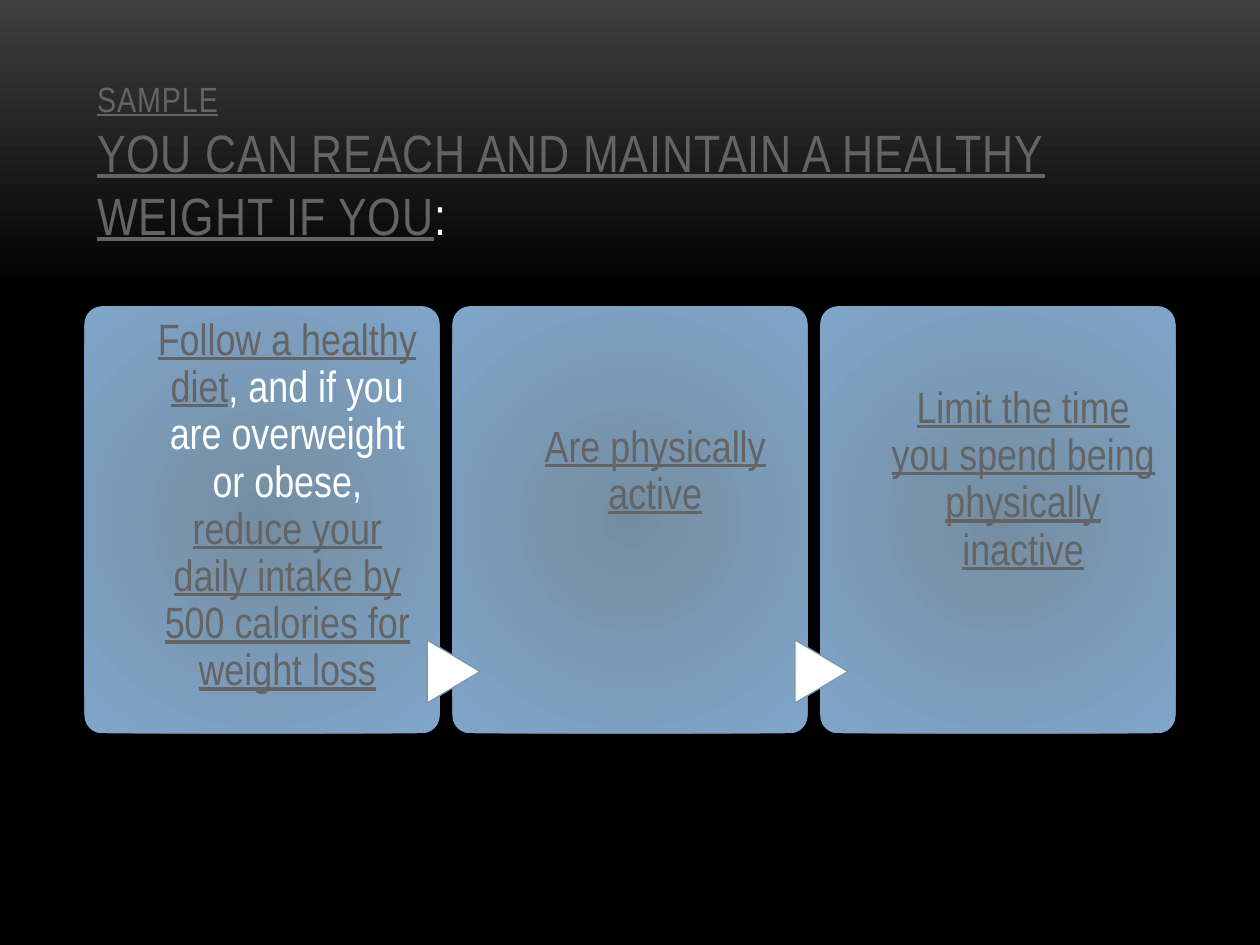
from lxml.etree import SubElement
from pptx import Presentation
from pptx.dml.color import RGBColor
from pptx.enum.shapes import MSO_SHAPE as Shape
from pptx.enum.text import MSO_ANCHOR as Anchor, MSO_AUTO_SIZE as AutoSize, PP_ALIGN as Align
from pptx.oxml.ns import qn
from pptx.util import Inches, Pt

GREY, WHITE = "646464", "FFFFFF"
CARD_TOP, CARD_WIDTH, CARD_HEIGHT, CARD_PITCH = 2.43, 2.82, 3.39, 2.92
CARDS = [  # distance of the text from the card's top, then (text, is a link) spans
    (0.09, [("Follow a healthy diet", True),
            (", and if you are overweight or obese, ", False),
            ("reduce your daily intake by 500 calories for weight loss", True)]),
    (1.13, [("Are physically active", True)]),
    (0.63, [("Limit the time you spend being physically inactive", True)]),
]


def color(value):
    return RGBColor.from_string(value)


def add_span(para, text, size, link=True, spacing=None):
    """Add a run; link spans are grey and underlined, others plain white."""
    span = para.add_run()
    span.text = text
    span.font.name = "Arial Narrow"
    span.font.size = Pt(size)
    span.font.underline = link
    span.font.color.rgb = color(GREY if link else WHITE)
    if spacing is not None:
        span.font._element.set("spc", str(int(spacing * 100)))


def fill_gradient(fill, stops):
    fill.gradient()
    for stop, (position, value) in zip(fill.gradient_stops, stops):
        stop.position = position
        stop.color.rgb = color(value)


def make_radial(shape):
    gradient = shape._element.spPr.find(qn("a:gradFill"))
    gradient.remove(gradient.find(qn("a:lin")))
    circle = SubElement(gradient, qn("a:path"), path="circle")
    SubElement(circle, qn("a:fillToRect"), l="50000", t="50000", r="50000", b="50000")


def paint_background(page):
    fill = page.background.fill
    fill_gradient(fill, [(0, "3F3F3F"), (0.31, "000000")])
    fill.gradient_angle = 270


def place_title(page, left, top, width, height):
    title = page.shapes.title
    title.left, title.top = Inches(left), Inches(top)
    title.width, title.height = Inches(width), Inches(height)
    frame = title.text_frame
    frame.vertical_anchor = Anchor.BOTTOM
    frame.auto_size = AutoSize.NONE
    para = frame.paragraphs[0]
    para.alignment = Align.LEFT
    add_span(para, "SAMPLE", 20, spacing=0.5)
    para.add_line_break()
    add_span(para, "YOU CAN REACH AND MAINTAIN A HEALTHY WEIGHT IF YOU", 30, spacing=0.5)
    add_span(para, ":", 30, link=False, spacing=0.5)


def add_card(page, left, top, width, height, text_top, spans):
    card = page.shapes.add_shape(Shape.ROUNDED_RECTANGLE, Inches(left), Inches(top),
                                 Inches(width), Inches(height))
    card.adjustments[0] = 0.05
    card.shadow.inherit = False
    card.line.fill.background()
    fill_gradient(card.fill, [(0, "758DA1"), (1, "7FA6CA")])
    make_radial(card)

    box = page.shapes.add_textbox(Inches(left + 0.56), Inches(top), Inches(2.1), Inches(height))
    frame = box.text_frame
    frame.word_wrap = True
    frame.margin_left = frame.margin_right = frame.margin_bottom = 0
    frame.margin_top = Inches(text_top)
    para = frame.paragraphs[0]
    para.alignment = Align.CENTER
    para.line_spacing = 0.9
    for text, link in spans:
        add_span(para, text, 25, link)


def add_arrow(page, card_left, card_top):
    """Add the triangle that leads into the card at the given corner."""
    arrow = page.shapes.add_shape(Shape.FLOWCHART_EXTRACT, Inches(card_left - 0.24),
                                  Inches(card_top + 2.69), Inches(0.5), Inches(0.42))
    arrow.rotation = 90
    arrow.shadow.inherit = False
    arrow.fill.solid()
    arrow.fill.fore_color.rgb = color(WHITE)
    arrow.line.color.rgb = color("7E97AD")
    arrow.line.width = Pt(0.75)


def add_card_row(page, left, top):
    for index, (text_top, spans) in enumerate(CARDS):
        card_left = left + index * CARD_PITCH
        add_card(page, card_left, top, CARD_WIDTH, CARD_HEIGHT, text_top, spans)
        if index:
            add_arrow(page, card_left, top)


def main():
    deck = Presentation()
    deck.slide_width, deck.slide_height = Inches(10), Inches(7.5)
    page = deck.slides.add_slide(deck.slide_layouts[5])
    paint_background(page)
    place_title(page, 0.67, 0.3, 8.67, 1.7)
    add_card_row(page, 0.67, CARD_TOP)
    deck.save("out.pptx")


if __name__ == "__main__":
    main()
